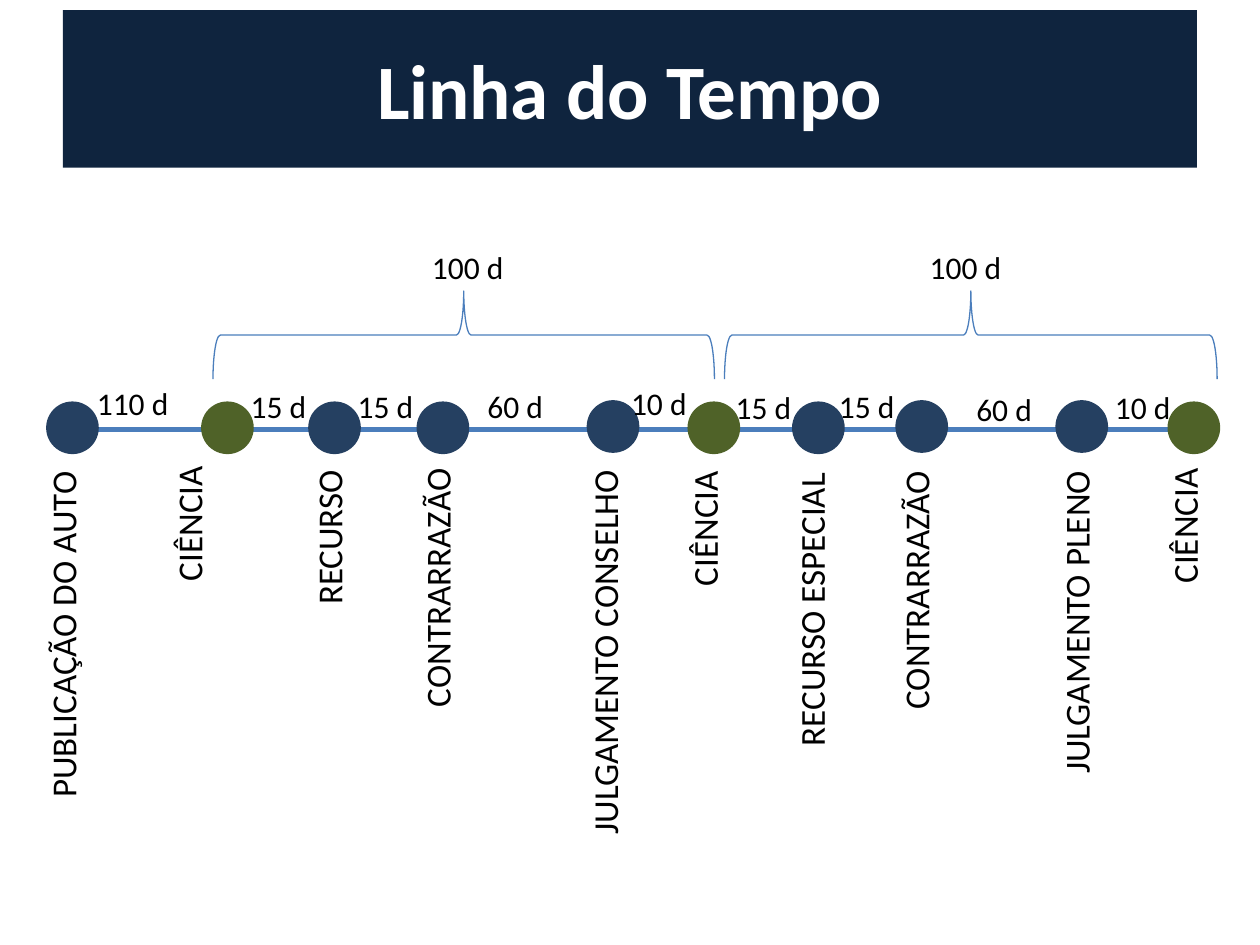
import pptx
import pptx.dml.color
import pptx.enum.shapes
import pptx.enum.text
import pptx.oxml.ns
import pptx.util
from dataclasses import dataclass
from lxml import etree

Inches = pptx.util.Inches
Pt = pptx.util.Pt
Shape = pptx.enum.shapes.MSO_SHAPE
Align = pptx.enum.text.PP_ALIGN
Anchor = pptx.enum.text.MSO_ANCHOR
AutoSize = pptx.enum.text.MSO_AUTO_SIZE


@dataclass(frozen=True)
class Theme:
    font: str = "Calibri"
    banner: str = "0F243E"
    line: str = "4B7EBC"
    step: str = "254061"
    notice: str = "4F6228"
    text: str = "000000"
    light: str = "FFFFFF"
    title_size: int = 44
    step_size: int = 20
    days_size: int = 18


THEME = Theme()
DOT_SIZE = 0.39
AXIS_Y = 3.41

# Step: name, dot left, dot top, label left, label top, label length
STEPS = [
    ("PUBLICAÇÃO DO AUTO", 0.38, 3.2, 0.28, 3.72, 2.71),
    ("CIÊNCIA", 1.61, 3.2, 1.28, 3.69, 1.02),
    ("RECURSO", 2.46, 3.2, 2.39, 3.72, 1.18),
    ("CONTRARRAZÃO", 3.32, 3.2, 3.25, 3.7, 2.01),
    ("JULGAMENTO CONSELHO", 4.67, 3.19, 4.58, 3.7, 3.02),
    ("CIÊNCIA", 5.47, 3.2, 5.37, 3.73, 1.02),
    ("RECURSO ESPECIAL", 6.3, 3.2, 6.22, 3.73, 2.29),
    ("CONTRARRAZÃO", 7.12, 3.19, 7.05, 3.72, 2.01),
    ("JULGAMENTO PLENO", 8.39, 3.19, 8.32, 3.72, 2.52),
    ("CIÊNCIA", 9.28, 3.2, 9.18, 3.71, 1.02),
]

# Interval between steps: text, left, top, width
INTERVALS = [
    ("110 d", 0.67, 3, 0.78),
    ("15 d", 1.89, 3.02, 0.65),
    ("15 d", 2.74, 3.02, 0.65),
    ("60 d", 3.77, 3.02, 0.65),
    ("10 d", 4.91, 3, 0.65),
    ("15 d", 5.74, 3.03, 0.65),
    ("15 d", 6.56, 3.02, 0.65),
    ("60 d", 7.65, 3.05, 0.65),
    ("10 d", 8.75, 3.03, 0.65),
]

# Phase under a brace: text, brace left, brace span, label left
PHASES = [("100 d", 1.69, 3.98, 3.33), ("100 d", 5.75, 3.91, 7.28)]


def rgb(value):
    return pptx.dml.color.RGBColor.from_string(value)


def write(shape, text, *, size, color=THEME.text, bold=False, align=Align.LEFT):
    para = shape.text_frame.paragraphs[0]
    para.alignment = align
    span = para.add_run()
    span.text = text
    span.font.name = THEME.font
    span.font.size = Pt(size)
    span.font.bold = bold
    span.font.color.rgb = rgb(color)


def add_text(page, text, left, top, width, height, *, size, wrap=False, upward=False):
    box = page.shapes.add_textbox(Inches(left), Inches(top), Inches(width), Inches(height))
    frame = box.text_frame
    frame.word_wrap = wrap
    frame.auto_size = AutoSize.SHAPE_TO_FIT_TEXT
    if upward:
        body = box.element.find(".//" + pptx.oxml.ns.qn("a:bodyPr"))
        body.set("vert", "vert270")
    write(box, text, size=size)


def add_shape(page, kind, left, top, width, height, *, fill=None, line=None, weight=0):
    shape = page.shapes.add_shape(
        kind, Inches(left), Inches(top), Inches(width), Inches(height))
    shape.shadow.inherit = False
    if fill:
        shape.fill.solid()
        shape.fill.fore_color.rgb = rgb(fill)
    else:
        shape.fill.background()
    if line:
        shape.line.color.rgb = rgb(line)
        shape.line.width = Pt(weight)
    else:
        shape.line.fill.background()
    return shape


def add_axis(page, start, end):
    axis = page.shapes.add_connector(
        pptx.enum.shapes.MSO_CONNECTOR.STRAIGHT,
        Inches(start), Inches(AXIS_Y), Inches(end), Inches(AXIS_Y))
    axis.line.color.rgb = rgb(THEME.line)
    axis.line.width = Pt(3)
    properties = axis.element.find(pptx.oxml.ns.qn("p:spPr"))
    etree.SubElement(properties, pptx.oxml.ns.qn("a:effectLst"))


def add_brace(page, left, top, span, depth):
    # A left brace turned a quarter points up; its frame keeps the same centre
    shift = (span - depth) / 2
    brace = add_shape(page, Shape.LEFT_BRACE, left + shift, top - shift, depth, span,
                      line=THEME.line, weight=0.75)
    brace.rotation = 90


def add_title(page, text):
    banner = add_shape(page, Shape.RECTANGLE, 0.5, 0.08, 9, 1.25, fill=THEME.banner)
    banner.text_frame.word_wrap = True
    banner.text_frame.vertical_anchor = Anchor.MIDDLE
    write(banner, text, size=THEME.title_size, color=THEME.light, bold=True,
          align=Align.CENTER)


def main():
    deck = pptx.Presentation()
    deck.slide_width, deck.slide_height = Inches(10), Inches(7.5)
    page = deck.slides.add_slide(deck.slide_layouts[6])

    add_title(page, "Linha do Tempo")

    # Timeline with its steps
    add_axis(page, 0.53, 9.42)
    for name, dot_left, dot_top, left, top, length in STEPS:
        color = THEME.notice if name == "CIÊNCIA" else THEME.step
        add_shape(page, Shape.OVAL, dot_left, dot_top, DOT_SIZE, DOT_SIZE,
                  fill=color, line=color, weight=2)
        add_text(page, name, left, top, 0.54, length, size=THEME.step_size, upward=True)

    # Days between steps
    for text, left, top, width in INTERVALS:
        add_text(page, text, left, top, width, 0.4, size=THEME.days_size)

    # Total days of each appeal phase
    for text, left, span, label_left in PHASES:
        add_brace(page, left, 2.31, span, 0.7)
        add_text(page, text, label_left, 1.92, 0.86, 0.4, size=THEME.days_size, wrap=True)

    deck.save("out.pptx")


if __name__ == "__main__":
    main()
